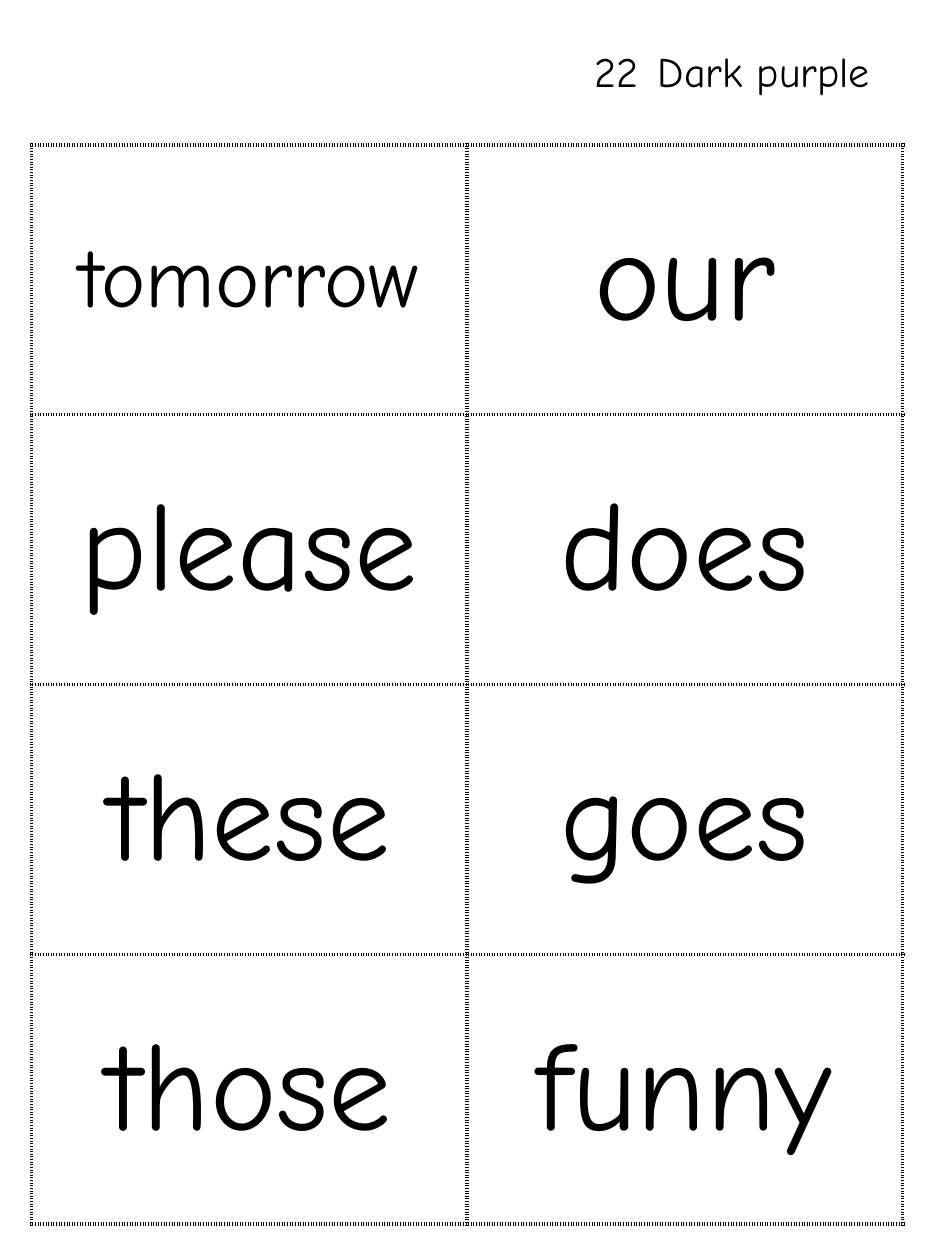
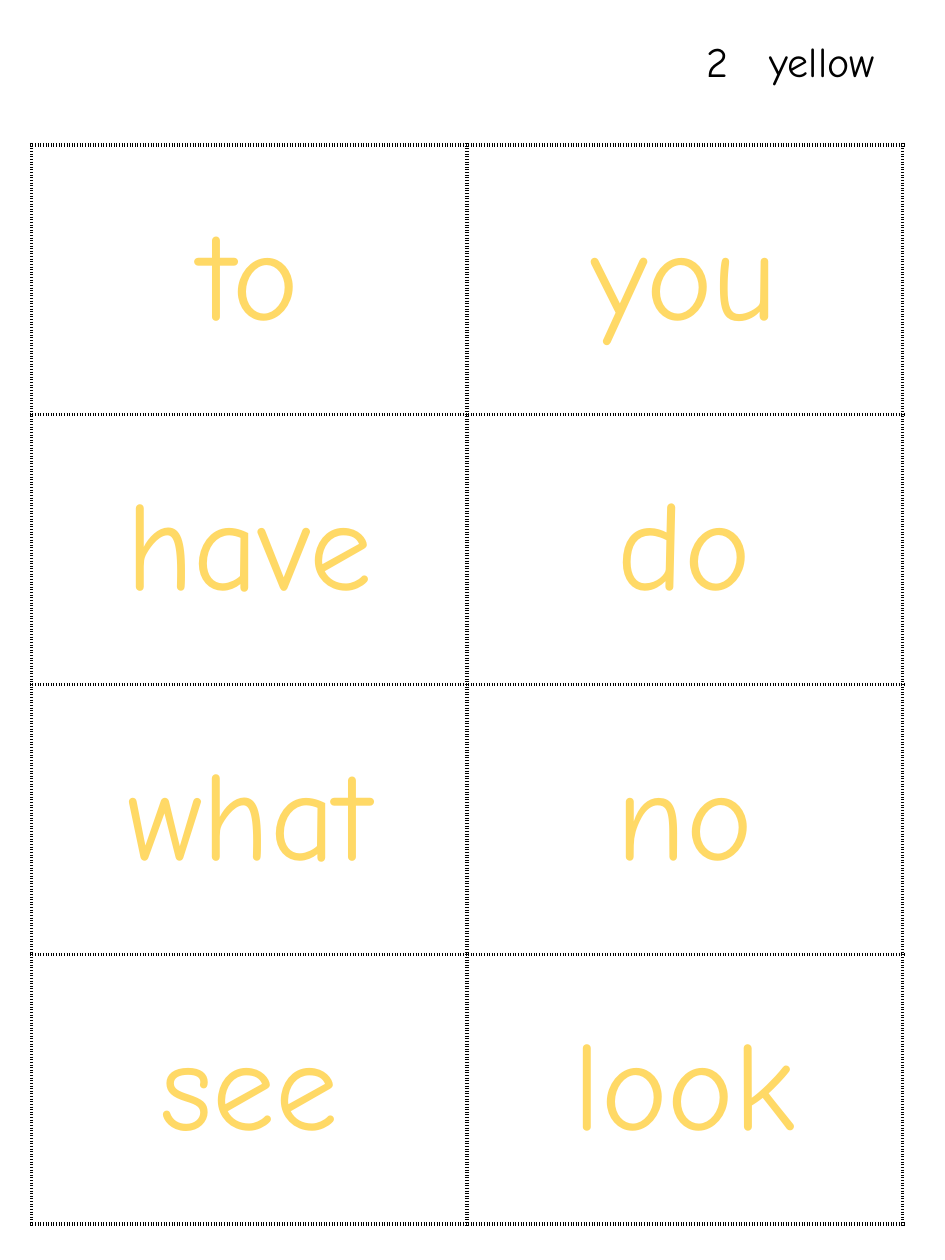
from lxml.etree import SubElement
from pptx import Presentation
from pptx.dml.color import RGBColor
from pptx.enum.text import MSO_ANCHOR, MSO_AUTO_SIZE, PP_ALIGN
from pptx.oxml.ns import qn
from pptx.util import Pt

# Content: one sheet of word cards per slide
SHEETS = [
    {
        "title": "22\tDark purple", "spot": (332.64, 22.32, 182.88, 36),
        "color": "ink",
        "words": [("tomorrow", "our"), ("please", "does"),
                  ("these", "goes"), ("those", "funny")],
    },
    {
        "title": "2\tyellow", "spot": (396.72, 16.56, 119.52, 36),
        "color": "yellow",
        "words": [("to", "you"), ("have", "do"),
                  ("what", "no"), ("see", "look")],
    },
]

# Shared look
COLORS = {"ink": "000000", "yellow": "FFD966"}
FONT = "Comic Neue"
LEFT, TOP = 18, 82.8
CARD_W, CARD_H = 248.8, 154.2
TITLE_SIZE, WORD_SIZE, LONG_SIZE = 24, 72, 48
LONG = 8  # words of this many letters get the smaller size


def style(par, size, color, align):
    par.alignment = align
    par.font.name = FONT
    par.font.size = Pt(size)
    par.font.color.rgb = RGBColor.from_string(COLORS[color])


def add_edges(cell):
    """Draw a dotted line on all four sides of a cell."""
    props = cell._tc.get_or_add_tcPr()
    for side in ("lnL", "lnR", "lnT", "lnB"):
        line = SubElement(props, qn("a:" + side), w=str(Pt(2.25)))
        fill = SubElement(line, qn("a:solidFill"))
        SubElement(fill, qn("a:srgbClr"), val=COLORS["ink"])
        SubElement(line, qn("a:prstDash"), val="sysDot")


def add_title(slide, text, spot):
    title = slide.shapes.title
    title.left, title.top, title.width, title.height = map(Pt, spot)
    frame = title.text_frame
    frame.text = text
    frame.word_wrap = False
    frame.auto_size = MSO_AUTO_SIZE.SHAPE_TO_FIT_TEXT
    frame.vertical_anchor = MSO_ANCHOR.TOP
    style(frame.paragraphs[0], TITLE_SIZE, "ink", PP_ALIGN.LEFT)


def add_cards(slide, words, color):
    rows, cols = len(words), len(words[0])
    table = slide.shapes.add_table(
        rows, cols, Pt(LEFT), Pt(TOP),
        Pt(cols * CARD_W), Pt(rows * CARD_H)).table
    table.first_row = table.horz_banding = False
    for r, pair in enumerate(words):
        for c, word in enumerate(pair):
            cell = table.cell(r, c)
            cell.text = word
            cell.vertical_anchor = MSO_ANCHOR.MIDDLE
            size = LONG_SIZE if len(word) >= LONG else WORD_SIZE
            style(cell.text_frame.paragraphs[0], size, color, PP_ALIGN.CENTER)
            add_edges(cell)
            cell.fill.background()


def main():
    deck = Presentation()
    deck.slide_width, deck.slide_height = Pt(540), Pt(720)
    layout = deck.slide_layouts.get_by_name("Title Only")
    for sheet in SHEETS:
        slide = deck.slides.add_slide(layout)
        add_title(slide, sheet["title"], sheet["spot"])
        add_cards(slide, sheet["words"], sheet["color"])
    deck.save("out.pptx")


if __name__ == "__main__":
    main()
